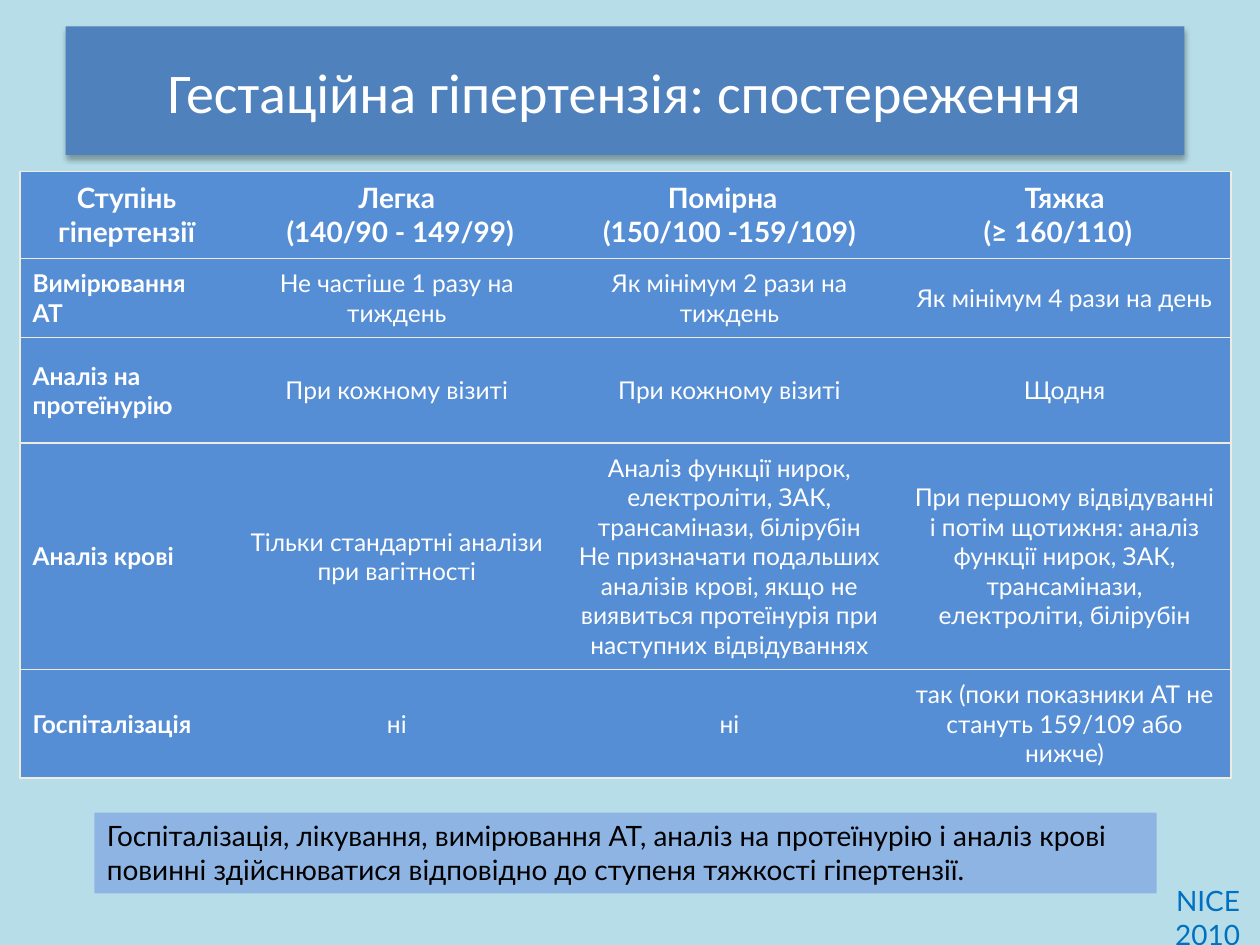
import pptx
import pptx.util
import pptx.dml.color
import pptx.enum.shapes
import pptx.enum.text
import pptx.oxml
import pptx.oxml.ns

Inches = pptx.util.Inches
Pt = pptx.util.Pt
ALIGN = pptx.enum.text.PP_ALIGN
ANCHOR = pptx.enum.text.MSO_ANCHOR
SHAPE = pptx.enum.shapes.MSO_SHAPE
NS = pptx.oxml.ns.nsdecls("a")

COLORS = {
    "background": "B7DEE8",
    "title": "4F81BD",
    "cell": "558ED5",
    "border": "EEECE1",
    "note": "8EB4E3",
    "source": "0070C0",
    "white": "FFFFFF",
    "black": "000000",
}

COL_WIDTHS = [1.69, 2.6, 2.68, 2.64]
ROW_HEIGHTS = [0.69, 0.62, 0.84, 1.79, 0.86]

# One list per row; a line break in a cell starts a new paragraph
ROWS = [
    ["Ступінь гіпертензії", "Легка\n (140/90 - 149/99)",
     "Помірна  \n(150/100 -159/109)", "Тяжка\n(≥ 160/110)  "],
    ["Вимірювання АТ", "Не частіше 1 разу на тиждень",
     "Як мінімум 2 рази на тиждень", "Як мінімум 4 рази на день"],
    ["Аналіз на протеїнурію", "При кожному візиті", "При кожному візиті", "Щодня"],
    ["Аналіз крові", "Тільки стандартні аналізи при вагітності",
     "Аналіз функції нирок, електроліти, ЗАК, трансамінази, білірубін\n"
     "Не призначати подальших аналізів крові, якщо не виявиться протеїнурія "
     "при наступних відвідуваннях",
     "При першому відвідуванні і потім щотижня: аналіз функції нирок, ЗАК, "
     "трансамінази, електроліти, білірубін"],
    ["Госпіталізація", "ні", "ні",
     "так (поки показники АТ не стануть 159/109 або нижче)"],
]


def rgb(name):
    return pptx.dml.color.RGBColor.from_string(COLORS[name])


def write(tf, text, size, color, align=ALIGN.LEFT, font="Lato", bold=False):
    for i, line in enumerate(text.split("\n")):
        p = tf.paragraphs[0] if i == 0 else tf.add_paragraph()
        p.alignment = align
        r = p.add_run()
        r.text = line
        r.font.name = font
        r.font.size = Pt(size)
        r.font.bold = bold
        r.font.color.rgb = rgb(color)


def add_box(s, kind, at, fill, anchor):
    sp = s.shapes.add_shape(kind, *map(Inches, at))
    sp.shadow.inherit = False
    sp.fill.solid()
    sp.fill.fore_color.rgb = rgb(fill)
    sp.line.fill.background()
    sp.text_frame.word_wrap = True
    sp.text_frame.vertical_anchor = anchor
    return sp


def add_shadow(sp):
    effects = sp._element.spPr.find(pptx.oxml.ns.qn("a:effectLst"))
    effects.append(pptx.oxml.parse_xml(
        f'<a:outerShdw {NS} blurRad="{Pt(3.5)}" dist="{Pt(2.2)}" dir="5400000" '
        f'algn="ctr" rotWithShape="0"><a:srgbClr val="{COLORS["black"]}">'
        '<a:alpha val="32000"/></a:srgbClr></a:outerShdw>'))


def set_borders(cell, visible):
    tcPr = cell._tc.get_or_add_tcPr()
    for side in "LRTB":
        fill = "<a:noFill/>"
        if side in visible:
            fill = f'<a:solidFill><a:srgbClr val="{COLORS["border"]}"/></a:solidFill>'
        tcPr.append(pptx.oxml.parse_xml(
            f'<a:ln{side} {NS} w="{Pt(1)}">{fill}</a:ln{side}>'))


def fill_cell(cell, text, row, col):
    # Horizontal rules everywhere, vertical ones only at the outer edges
    edges = "TB" + ("L" if col == 0 else "")
    edges += "R" if col == len(COL_WIDTHS) - 1 else ""
    set_borders(cell, edges)
    cell.fill.solid()
    cell.fill.fore_color.rgb = rgb("cell")
    cell.vertical_anchor = ANCHOR.MIDDLE
    cell.margin_left = cell.margin_right = Inches(0.1)
    cell.margin_top = cell.margin_bottom = Inches(0.08)
    header = row == 0
    write(cell.text_frame, text, 16 if header else 14, "white",
          ALIGN.CENTER if header or col > 0 else ALIGN.LEFT,
          bold=header or col == 0)


def add_care_table(s, left, top):
    table = s.shapes.add_table(
        len(ROWS), len(COL_WIDTHS), Inches(left), Inches(top),
        Inches(sum(COL_WIDTHS)), Inches(sum(ROW_HEIGHTS))).table
    table.horz_banding = False
    for column, width in zip(table.columns, COL_WIDTHS):
        column.width = Inches(width)
    for i, texts in enumerate(ROWS):
        table.rows[i].height = Inches(ROW_HEIGHTS[i])
        for j, text in enumerate(texts):
            fill_cell(table.cell(i, j), text, i, j)


def main():
    prs = pptx.Presentation()
    prs.slide_width, prs.slide_height = Inches(10), Inches(7.5)
    s = prs.slides.add_slide(prs.slide_layouts[6])
    s.background.fill.solid()
    s.background.fill.fore_color.rgb = rgb("background")

    # Monitoring by degree of hypertension
    add_care_table(s, 0.16, 1.36)

    # Closing note
    note = add_box(s, SHAPE.RECTANGLE, (0.75, 6.45, 8.43, 0.64), "note", ANCHOR.TOP)
    write(note.text_frame,
          "Госпіталізація, лікування, вимірювання АТ, аналіз на протеїнурію і "
          "аналіз крові повинні здійснюватися відповідно до ступеня тяжкості "
          "гіпертензії.", 16, "black")

    # Source of the guideline
    tf = s.shapes.add_textbox(
        Inches(8.68), Inches(7.09), Inches(1.26), Inches(0.38)).text_frame
    tf.word_wrap = True
    tf.vertical_anchor = ANCHOR.MIDDLE
    write(tf, "NICE 2010", 16, "source", ALIGN.RIGHT)

    # Title
    title = add_box(s, SHAPE.ROUNDED_RECTANGLE, (0.52, 0.21, 8.88, 1.02),
                    "title", ANCHOR.MIDDLE)
    title.adjustments[0] = 0
    add_shadow(title)
    write(title.text_frame, "Гестаційна гіпертензія: спостереження", 32, "white",
          ALIGN.CENTER, font="Calibri")

    prs.save("out.pptx")


if __name__ == "__main__":
    main()
